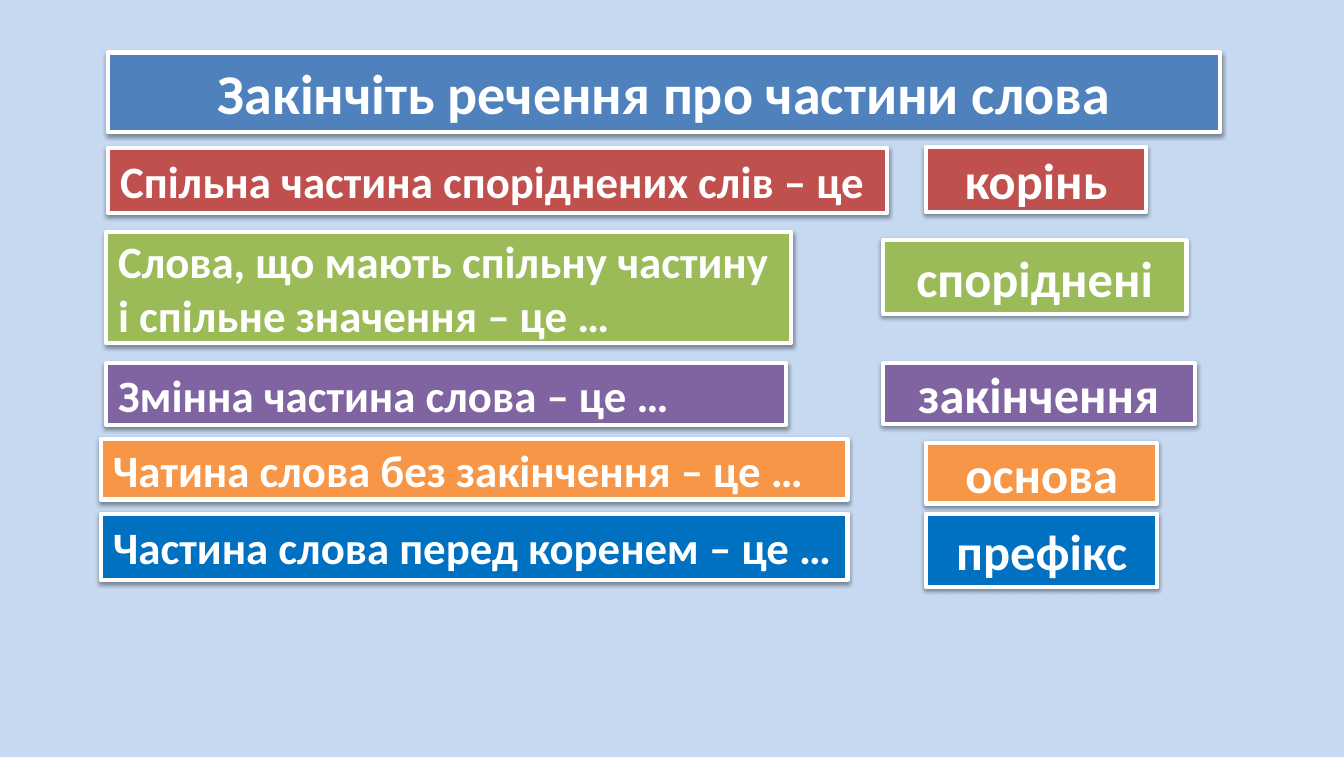
import lxml.etree
import pptx
import pptx.dml.color
import pptx.enum.shapes
import pptx.enum.text
import pptx.oxml.ns
import pptx.util

Inches, Pt = pptx.util.Inches, pptx.util.Pt
ALIGN = pptx.enum.text.PP_ALIGN
ANCHOR = pptx.enum.text.MSO_ANCHOR
AUTO = pptx.enum.text.MSO_AUTO_SIZE

COLORS = {
    "background": "C6D9F1",
    "white": "FFFFFF",
    "shadow": "000000",
    "title": "4F81BD",
    "root": "C0504D",
    "related": "9BBB59",
    "ending": "8064A2",
    "stem": "F79646",
    "prefix": "0070C0",
}


def rgb(name):
    return pptx.dml.color.RGBColor.from_string(COLORS[name])


def write_text(tf, text, size=32, align=ALIGN.LEFT, color="white", font="Calibri"):
    p = tf.paragraphs[0]
    p.alignment = align
    r = p.add_run()
    r.text = text
    r.font.size = Pt(size)
    r.font.name = font
    r.font.bold = True
    r.font.color.rgb = rgb(color)


class SlideBuilder:
    def __init__(self, prs):
        self.slide = prs.slides.add_slide(prs.slide_layouts[5])
        fill = self.slide.background.fill
        fill.solid()
        fill.fore_color.rgb = rgb("background")

    def add_shadow(self, sp):
        sp.shadow.inherit = False
        qn = pptx.oxml.ns.qn
        effects = sp.element.spPr.find(qn("a:effectLst"))
        shadow = lxml.etree.SubElement(
            effects, qn("a:outerShdw"), blurRad=str(Pt(3.1)), dist=str(Pt(1.6)),
            dir="5400000", rotWithShape="0")
        color = lxml.etree.SubElement(shadow, qn("a:srgbClr"), val=COLORS["shadow"])
        lxml.etree.SubElement(color, qn("a:alpha"), val="38000")

    def style_box(self, sp, color, text, grow=False, **text_format):
        sp.fill.solid()
        sp.fill.fore_color.rgb = rgb(color)
        sp.line.color.rgb = rgb("white")
        sp.line.width = Pt(3)
        self.add_shadow(sp)
        tf = sp.text_frame
        tf.word_wrap = True
        tf.auto_size = AUTO.SHAPE_TO_FIT_TEXT if grow else AUTO.NONE
        tf.vertical_anchor = ANCHOR.TOP if grow else ANCHOR.MIDDLE
        tf.margin_left = tf.margin_right = Inches(0.12)
        tf.margin_top = tf.margin_bottom = Inches(0.06)
        write_text(tf, text, **text_format)

    def title(self, box, text):
        sp = self.slide.shapes.title
        sp.left, sp.top, sp.width, sp.height = map(Inches, box)
        self.style_box(sp, "title", text, size=40, align=ALIGN.CENTER)

    def card(self, box, color, text, **options):
        sp = self.slide.shapes.add_shape(
            pptx.enum.shapes.MSO_SHAPE.RECTANGLE, *map(Inches, box))
        self.style_box(sp, color, text, **options)


# Colour, sentence and its box, answer and its box
ROWS = [
    ("root", "Спільна частина споріднених слів – це", (1.07, 1.47, 7.72, 0.64),
     "корінь", (9.18, 1.46, 2.18, 0.64)),
    ("related", "Слова, що мають спільну частину і спільне значення – це …",
     (1.05, 2.3, 6.79, 1.1), "споріднені", (8.75, 2.38, 3.01, 0.73)),
    ("ending", "Змінна частина слова – це …", (1.05, 3.6, 6.74, 0.61),
     "закінчення", (8.75, 3.6, 3.09, 0.6)),
    ("stem", "Чатина слова без закінчення – це …", (1, 4.35, 7.4, 0.6),
     "основа", (9.18, 4.39, 2.29, 0.6)),
    ("prefix", "Частина слова перед коренем – це …", (1, 5.09, 7.4, 0.66),
     "префікс", (9.18, 5.09, 2.29, 0.73)),
]


def main():
    prs = pptx.Presentation()
    prs.slide_width, prs.slide_height = Inches(13.32), Inches(7.5)
    s = SlideBuilder(prs)

    # Heading
    s.title((1.07, 0.52, 11.02, 0.79), "Закінчіть речення про частини слова")

    # Sentences with their answers
    for color, sentence, sentence_box, answer, answer_box in ROWS:
        grow = color == "prefix"
        s.card(sentence_box, color, sentence, grow=grow)
        s.card(answer_box, color, answer, grow=grow, size=36, align=ALIGN.CENTER)

    prs.save("out.pptx")


if __name__ == "__main__":
    main()
